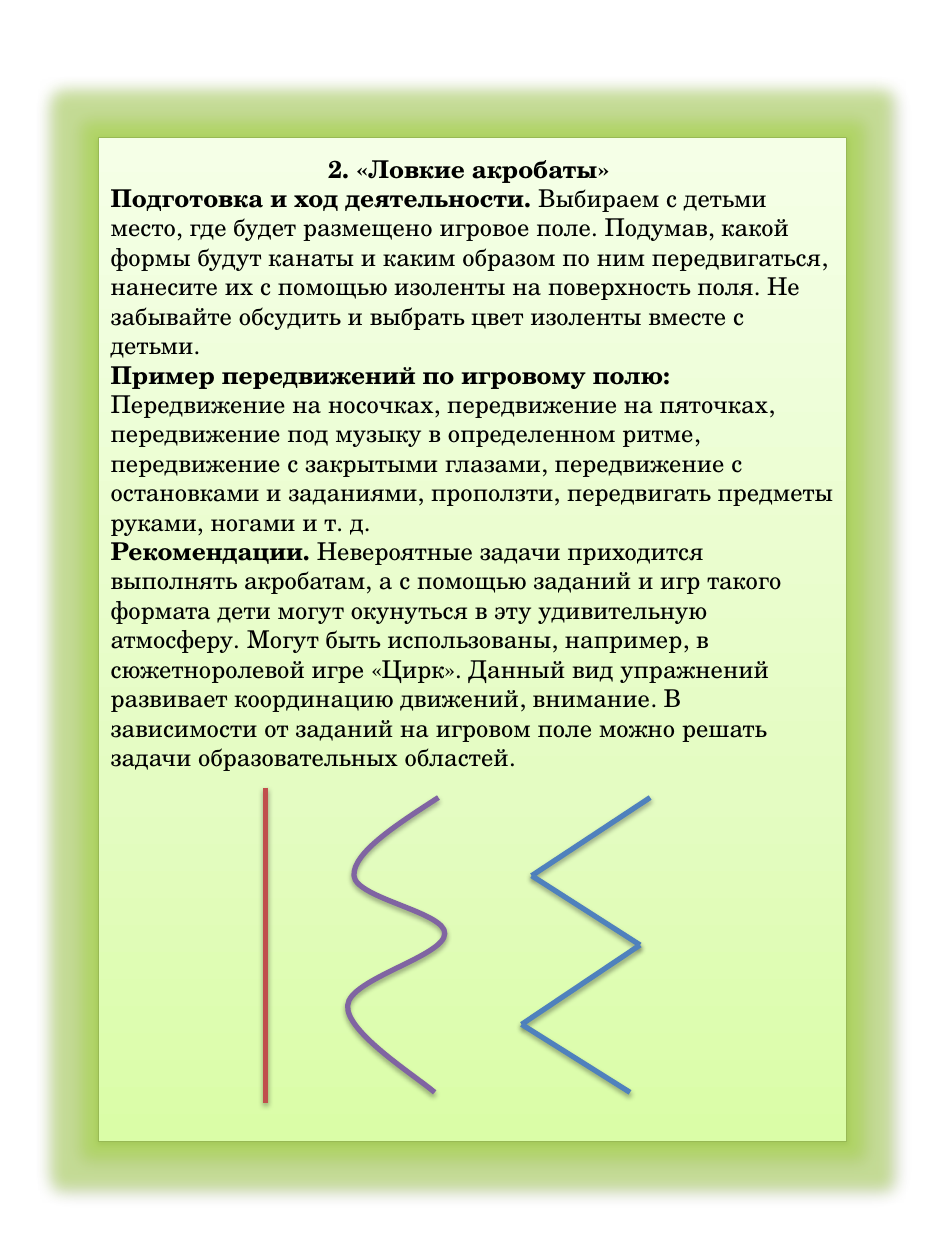
from copy import deepcopy

from pptx import Presentation
from pptx.dml.color import RGBColor
from pptx.enum.shapes import MSO_CONNECTOR as CONN, MSO_SHAPE as SHAPE
from pptx.enum.text import PP_ALIGN as ALIGN
from pptx.oxml import parse_xml
from pptx.oxml.ns import nsdecls, qn
from pptx.util import Inches, Pt

COLORS = {
    "text": "000000", "border": "98B955", "glow": "9BBB59", "shadow": "000000",
    "straight": "C0504D", "wave": "8064A2", "zigzag": "4F81BD",
}
PANEL_STOPS = [(0, "DAFDA7"), (0.35, "E4FCC2"), (1, "F5FFE7")]
TEXT_FORMAT = {"name": "TeX Gyre Schola", "size": Pt(14)}

TITLE = "2. «Ловкие акробаты» "
SECTIONS = [
    ("Подготовка и ход деятельности. ",
     "Выбираем с детьми место, где будет размещено игровое поле. Подумав, какой "
     "формы будут канаты и каким образом по ним передвигаться, нанесите их с помощью "
     "изоленты на поверхность поля. Не забывайте обсудить и выбрать цвет изоленты "
     "вместе с детьми."),
    ("Пример передвижений по игровому полю: ",
     "Передвижение на носочках, передвижение на пяточках, передвижение под музыку в "
     "определенном ритме, передвижение с закрытыми глазами, передвижение с "
     "остановками и заданиями, проползти, передвигать предметы руками, ногами и т. д."),
    ("Рекомендации. ",
     "Невероятные задачи приходится выполнять акробатам, а с помощью заданий и игр "
     "такого формата дети могут окунуться в эту удивительную атмосферу. Могут быть "
     "использованы, например, в сюжетноролевой игре «Цирк». Данный вид упражнений "
     "развивает координацию движений, внимание. В зависимости от заданий на игровом "
     "поле можно решать задачи образовательных областей."),
]

STRAIGHT = [(2.11, 6.25), (2.11, 8.75)]
ZIGZAG = [(5.16, 6.33), (4.22, 6.95), (5.08, 7.5), (4.14, 8.13), (5, 8.67)]
# Start point, then two control points and an end point for each curve
WAVE = [
    (3.48, 6.33),
    (3.14, 6.55), (2.8, 6.77), (2.81, 6.95),
    (2.82, 7.13), (3.54, 7.24), (3.53, 7.41),
    (3.53, 7.59), (2.77, 7.77), (2.76, 7.98),
    (2.74, 8.19), (3.3, 8.54), (3.45, 8.67),
]


def rgb(name):
    return RGBColor.from_string(COLORS[name])


def set_line(sp, color, width):
    sp.line.color.rgb = rgb(color)
    sp.line.width = Pt(width)


def add_effects(sp, alpha, dist, glow=""):
    """Put a downward shadow, after an optional glow, on a shape with its line set."""
    sp._element.spPr.append(parse_xml(
        f'<a:effectLst {nsdecls("a")}>{glow}'
        f'<a:outerShdw blurRad="{Pt(3.1)}" dist="{Pt(dist)}" dir="5400000" rotWithShape="0">'
        f'<a:srgbClr val="{COLORS["shadow"]}"><a:alpha val="{alpha * 1000}"/></a:srgbClr>'
        '</a:outerShdw></a:effectLst>'))


def add_panel(slide):
    sp = slide.shapes.add_shape(
        SHAPE.RECTANGLE, Inches(0.78), Inches(1.09), Inches(5.94), Inches(7.97))
    sp.fill.gradient()
    sp.fill.gradient_angle = 90
    stops = sp._element.spPr.find(".//" + qn("a:gsLst"))
    stops.append(deepcopy(stops[0]))
    for stop, (position, color) in zip(sp.fill.gradient_stops, PANEL_STOPS):
        stop.position = position
        stop.color.rgb = RGBColor.from_string(color)
    set_line(sp, "border", 0.75)
    add_effects(sp, 38, 1.6, glow=(
        f'<a:glow rad="{Pt(18)}"><a:srgbClr val="{COLORS["glow"]}">'
        '<a:satMod val="175000"/><a:alpha val="40000"/></a:srgbClr></a:glow>'))


def add_run(p, text, bold):
    r = p.add_run()
    r.text = text
    for key, value in {**TEXT_FORMAT, "bold": bold}.items():
        setattr(r.font, key, value)
    r.font.color.rgb = rgb("text")


def add_description(slide):
    box = slide.shapes.add_textbox(Inches(0.78), Inches(1.17), Inches(5.94), Inches(5.05))
    tf = box.text_frame
    tf.word_wrap = True
    tf.paragraphs[0].alignment = ALIGN.CENTER
    add_run(tf.paragraphs[0], TITLE, True)
    for heading, body in SECTIONS:
        p = tf.add_paragraph()
        add_run(p, heading, True)
        add_run(p, body, False)


def add_rope(slide, points, color):
    """Join successive points with straight lines."""
    for start, end in zip(points, points[1:]):
        line = slide.shapes.add_connector(
            CONN.STRAIGHT, *(Inches(v) for v in start + end))
        set_line(line, color, 3)
        add_effects(line, 35, 1.8)


def add_curved_rope(slide, points, color):
    start, *rest = [(Inches(x), Inches(y)) for x, y in points]
    builder = slide.shapes.build_freeform(*start)
    builder.add_line_segments(rest, close=False)
    sp = builder.convert_to_shape()
    # Gather each three straight segments into one Bézier curve
    segments = list(sp._element.iter(qn("a:lnTo")))
    for i in range(0, len(segments), 3):
        curve = parse_xml(f'<a:cubicBezTo {nsdecls("a")}/>')
        segments[i].addprevious(curve)
        for segment in segments[i:i + 3]:
            curve.append(segment[0])
            segment.getparent().remove(segment)
    sp.fill.background()
    set_line(sp, color, 3)
    add_effects(sp, 35, 1.8)


def main():
    prs = Presentation()
    prs.slide_width, prs.slide_height = Inches(7.5), Inches(10)
    slide = prs.slides.add_slide(prs.slide_layouts[6])
    add_panel(slide)
    add_description(slide)
    add_rope(slide, STRAIGHT, "straight")
    add_curved_rope(slide, WAVE, "wave")
    add_rope(slide, ZIGZAG, "zigzag")
    prs.save("out.pptx")


if __name__ == "__main__":
    main()
